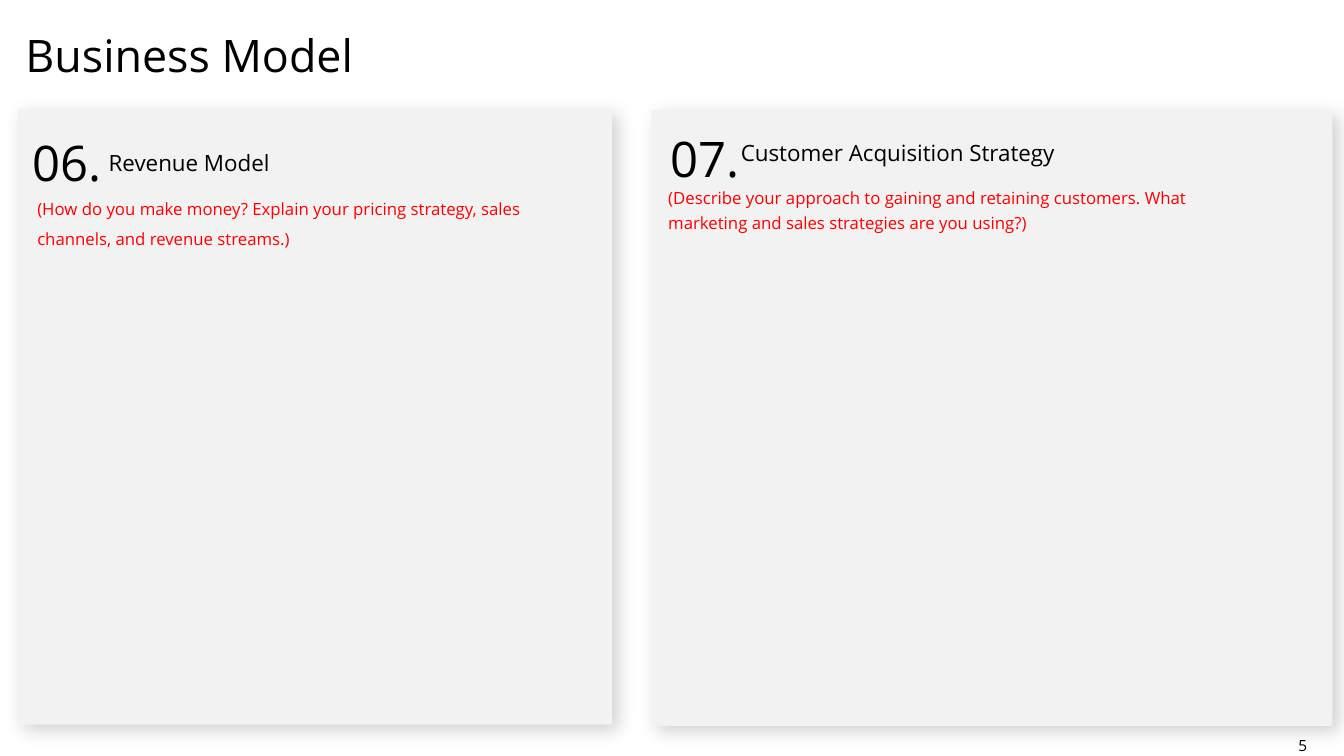
from lxml.etree import SubElement
from pptx import Presentation
from pptx.dml.color import RGBColor
from pptx.enum.shapes import MSO_SHAPE
from pptx.enum.text import MSO_ANCHOR, MSO_AUTO_SIZE, PP_ALIGN
from pptx.oxml.ns import qn
from pptx.util import Cm, Pt

FONT = "Open Sans"
BLACK, RED, PANEL_GREY = "000000", "FF0000", "F2F2F2"


def colour(hex_text):
    return RGBColor.from_string(hex_text)


def place(shape, left, top, width, height):
    shape.left, shape.top = Cm(left), Cm(top)
    shape.width, shape.height = Cm(width), Cm(height)


def write(shape, text, size, hex_text=BLACK, align=PP_ALIGN.LEFT, spacing=1.0, wrap=True):
    frame = shape.text_frame
    frame.margin_left = frame.margin_right = frame.margin_top = frame.margin_bottom = 0
    frame.vertical_anchor = MSO_ANCHOR.TOP
    frame.word_wrap = wrap
    frame.auto_size = MSO_AUTO_SIZE.SHAPE_TO_FIT_TEXT
    para = frame.paragraphs[0]
    para.alignment = align
    para.line_spacing = spacing
    span = para.add_run()
    span.text = text
    span.font.name = FONT
    span.font.size = Pt(size)
    span.font.color.rgb = colour(hex_text)


def add_text(shapes, area, text, size, **style):
    box = shapes.add_textbox(*(Cm(length) for length in area))
    write(box, text, size, **style)


def add_soft_shadow(shape):
    shape.shadow.inherit = False
    effects = shape._element.spPr.find(qn("a:effectLst"))
    shadow = SubElement(effects, qn("a:outerShdw"), blurRad=str(Pt(13)), dist=str(Pt(6)),
                        dir="2700000", algn="tl", rotWithShape="0")
    shade = SubElement(shadow, qn("a:srgbClr"), val=BLACK)
    SubElement(shade, qn("a:alpha"), val="18000")


def add_panel(page, left, top, width, height):
    panel = page.shapes.add_shape(MSO_SHAPE.RECTANGLE, Cm(left), Cm(top), Cm(width), Cm(height))
    panel.fill.solid()
    panel.fill.fore_color.rgb = colour(PANEL_GREY)
    panel.line.fill.background()
    add_soft_shadow(panel)


def add_section(page, number, heading, prompt, spacing):
    """Each of the three parts is a pair of area and text."""
    shapes = page.shapes.add_group_shape().shapes
    add_text(shapes, *number, 35, wrap=False)
    add_text(shapes, *heading, 16, wrap=False)
    add_text(shapes, *prompt, 12, hex_text=RED, spacing=spacing)


def main():
    deck = Presentation()
    deck.slide_width, deck.slide_height = Cm(33.87), Cm(19.05)
    page = deck.slides.add_slide(deck.slide_layouts[5])

    # Title
    title = page.shapes.title
    place(title, 0.64, 0.69, 31.5, 1.37)
    write(title, "Business Model", 32)

    # Revenue panel
    add_panel(page, 0.46, 2.74, 14.96, 15.52)
    add_section(
        page,
        ((0.81, 3.35, 1.78, 1.5), "06."),
        ((2.74, 3.76, 4.24, 0.69), "Revenue Model"),
        ((0.94, 4.75, 13.54, 3),
         "(How do you make money? Explain your pricing strategy, sales channels, "
         "and revenue streams.)"),
        spacing=1.5)

    # Customer panel
    add_panel(page, 16.43, 2.77, 17.15, 15.52)
    add_section(
        page,
        ((16.89, 3.23, 1.78, 1.5), "07."),
        ((18.67, 3.51, 8.31, 0.69), "Customer Acquisition Strategy"),
        ((16.84, 4.6, 13.64, 1.24),
         "(Describe your approach to gaining and retaining customers. "
         "What marketing and sales strategies are you using?)"),
        spacing=1.25)

    # Page number
    add_text(page.shapes, (31.78, 18.54, 2.11, 0.48), "5", 11, align=PP_ALIGN.CENTER)

    deck.save("out.pptx")


if __name__ == "__main__":
    main()
